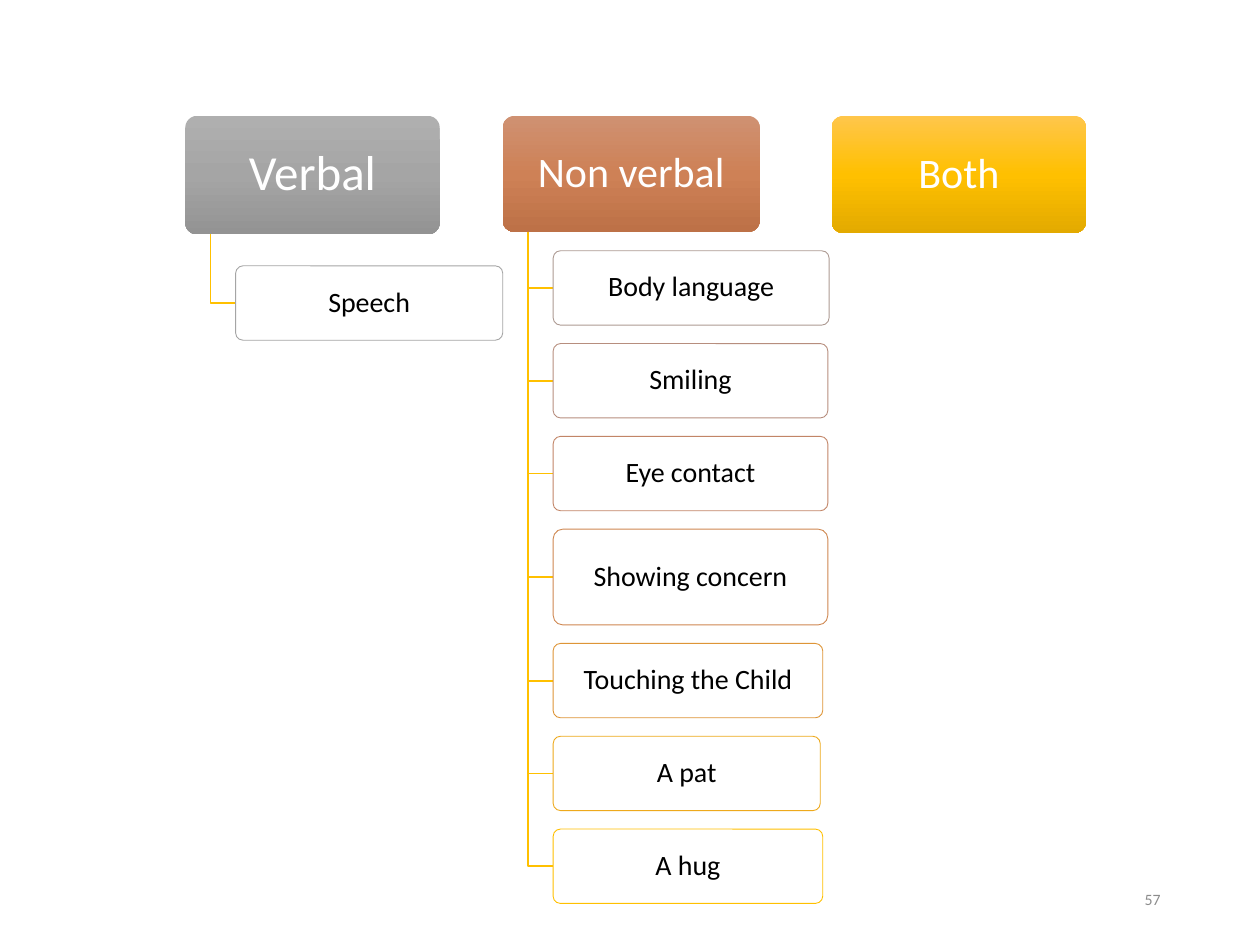
"""Build a slide that sorts ways of communicating into verbal, non verbal and both."""
from copy import deepcopy

from pptx import Presentation
from pptx.dml.color import RGBColor
from pptx.enum.shapes import MSO_SHAPE
from pptx.enum.text import MSO_ANCHOR, PP_ALIGN
from pptx.util import Inches, Pt

ROUNDED = MSO_SHAPE.ROUNDED_RECTANGLE
MIDDLE = MSO_ANCHOR.MIDDLE
CENTER, RIGHT = PP_ALIGN.CENTER, PP_ALIGN.RIGHT

COLORS = {"white": "FFFFFF", "black": "000000", "branch": "FFC000", "number": "8C8C8C"}
FONT = "Calibri"
TOP = 0.92
INDENT = 0.2
CHILD_HEIGHT = 0.59

GROUPS = [
    {
        "title": "Verbal", "size": 28, "left": 1.47, "width": 2.02, "height": 0.94,
        "gradient": ["AFAFAF", "A5A5A5", "939393"], "first": 2.11, "bottom": 2.70,
        "children": [("Speech", 2.12, CHILD_HEIGHT, "A5A5A5")],
    },
    {
        "title": "Non verbal", "size": 24, "left": 3.99, "width": 2.04, "height": 0.92,
        "gradient": ["CF9172", "CE8156", "BD7147"], "first": 1.99, "bottom": 7.17,
        "children": [
            ("Body language", 2.19, CHILD_HEIGHT, "AD9A92"),
            ("Smiling", 2.18, CHILD_HEIGHT, "B78E7E"),
            ("Eye contact", 2.18, CHILD_HEIGHT, "C28567"),
            ("Showing concern", 2.18, 0.76, "CF8750"),
            ("Touching the Child", 2.14, CHILD_HEIGHT, "DE9537"),
            ("A pat", 2.12, CHILD_HEIGHT, "EEA91C"),
            ("A hug", 2.14, CHILD_HEIGHT, "FFC000"),
        ],
    },
    {
        "title": "Both", "size": 24, "left": 6.6, "width": 2.02, "height": 0.93,
        "gradient": ["FFC64B", "FFC000", "E3AA00"], "first": 0, "bottom": 0,
        "children": [],
    },
]


def rgb(value):
    return RGBColor.from_string(value)


def write(shape, text, size, color, alignment, margin=0.05):
    frame = shape.text_frame
    margins = {f"margin_{side}": Inches(margin) for side in ("left", "top", "right", "bottom")}
    for name, value in {"word_wrap": True, "vertical_anchor": MIDDLE, **margins}.items():
        setattr(frame, name, value)
    paragraph = frame.paragraphs[0]
    paragraph.alignment = alignment
    paragraph.line_spacing = 0.9
    run = paragraph.add_run()
    run.text = text
    for name, value in {"name": FONT, "size": Pt(size)}.items():
        setattr(run.font, name, value)
    run.font.color.rgb = rgb(color)


def add_box(slide, left, top, width, height):
    shape = slide.shapes.add_shape(ROUNDED, *map(Inches, (left, top, width, height)))
    shape.adjustments[0] = 0.1
    shape.shadow.inherit = False
    return shape


def fill_gradient(shape, colors):
    fill = shape.fill
    fill.gradient()
    fill.gradient_angle = 270
    stop_list = shape._element.spPr.find(".//{*}gsLst")
    stop_list.insert(1, deepcopy(stop_list[0]))
    for stop, position, color in zip(fill.gradient_stops, (0, 0.5, 1), colors):
        stop.position = position
        stop.color.rgb = rgb(color)


def add_branch(slide, left, top, right, bottom):
    builder = slide.shapes.build_freeform(Inches(left), Inches(top))
    corners = [(left, bottom), (right, bottom)]
    builder.add_line_segments([(Inches(x), Inches(y)) for x, y in corners], close=False)
    branch = builder.convert_to_shape()
    branch.shadow.inherit = False
    branch.fill.background()
    branch.line.color.rgb = rgb(COLORS["branch"])
    branch.line.width = Pt(1)


def add_group(slide, group):
    header = add_box(slide, group["left"], TOP, group["width"], group["height"])
    fill_gradient(header, group["gradient"])
    header.line.fill.background()
    write(header, group["title"], group["size"], COLORS["white"], CENTER)

    children = group["children"]
    trunk = group["left"] + INDENT
    child_left = trunk + INDENT
    used = sum(height for _, _, height, _ in children)
    gap = (group["bottom"] - group["first"] - used) / max(len(children) - 1, 1)
    top = group["first"]
    for text, width, height, color in children:
        add_branch(slide, trunk, TOP + group["height"], child_left, top + height / 2)
        box = add_box(slide, child_left, top, width, height)
        box.fill.solid()
        box.fill.fore_color.rgb = rgb(COLORS["white"])
        box.line.color.rgb = rgb(color)
        box.line.width = Pt(0.5)
        write(box, text, 16, COLORS["black"], CENTER, 0.03)
        top += height + gap


def main():
    presentation = Presentation()
    presentation.slide_width, presentation.slide_height = Inches(10), Inches(7.5)
    slide = presentation.slides.add_slide(presentation.slide_layouts[6])
    for group in GROUPS:
        add_group(slide, group)
    number = slide.shapes.add_textbox(*map(Inches, (7.06, 6.95, 2.25, 0.4)))
    write(number, "57", 9, COLORS["number"], RIGHT, 0.1)
    presentation.save("out.pptx")


if __name__ == "__main__":
    main()
